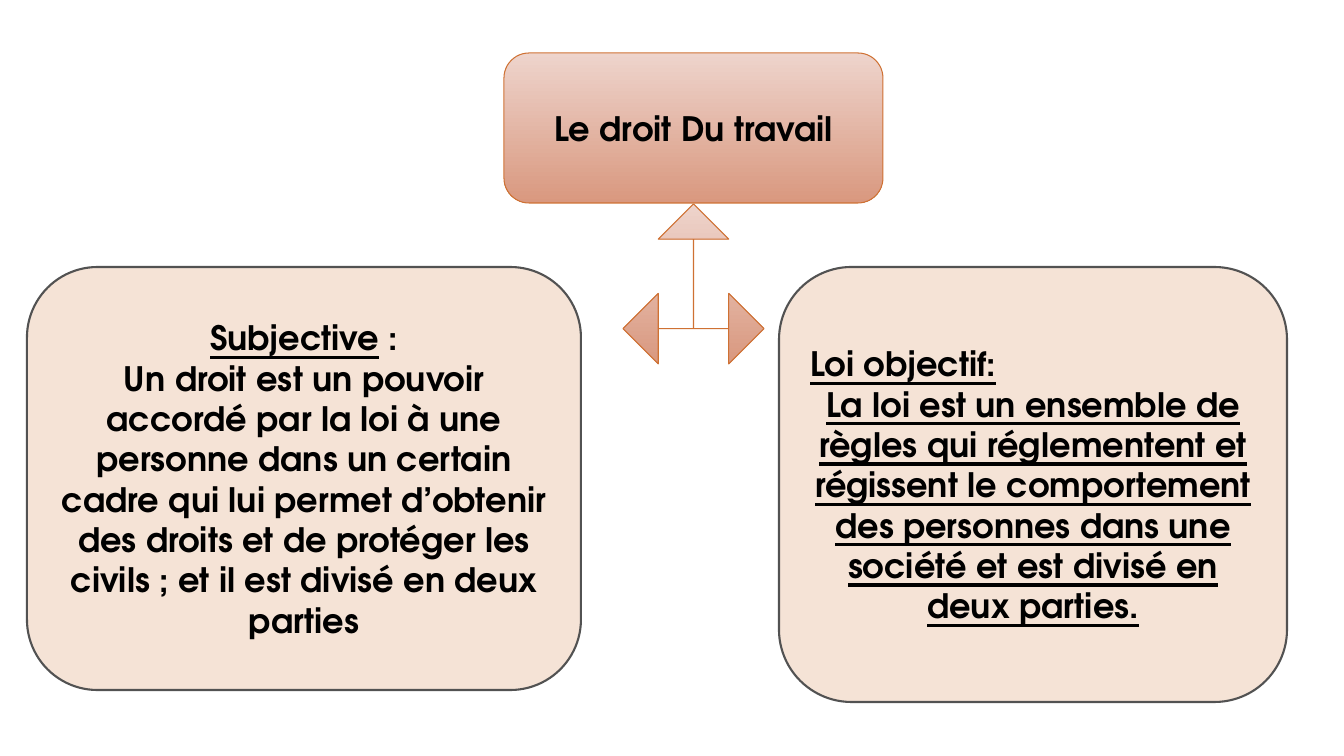
from dataclasses import dataclass

from pptx import Presentation
from pptx.dml.color import RGBColor
from pptx.enum.shapes import MSO_SHAPE
from pptx.enum.text import MSO_ANCHOR, PP_ALIGN
from pptx.shapes.autoshape import Shape
from pptx.slide import Slide
from pptx.text.text import TextFrame
from pptx.util import Pt

BOX = MSO_SHAPE.FLOWCHART_ALTERNATE_PROCESS
THREE_WAY_ARROW = MSO_SHAPE.LEFT_RIGHT_UP_ARROW
LEFT, CENTER = PP_ALIGN.LEFT, PP_ALIGN.CENTER
MIDDLE = MSO_ANCHOR.MIDDLE

EMU_PER_PX = 914400 / 100.8
FONT = "TeX Gyre Adventor"
BLACK = "000000"
ORANGE = "CF7133"
GREY = "525252"
CREAM = "F5E3D6"
ROSE_GRADIENT = ("EED4CC", "D9987F")


@dataclass(frozen=True)
class Run:
    text: str
    underline: bool = False


@dataclass(frozen=True)
class Line:
    runs: tuple[Run, ...]
    align: PP_ALIGN = CENTER


@dataclass(frozen=True)
class Node:
    """A diagram part; two fill colours make a top-to-bottom gradient."""
    left: int
    top: int
    width: int
    height: int
    fills: tuple[str, ...]
    outline: str
    outline_pt: float
    lines: tuple[Line, ...] = ()
    preset: MSO_SHAPE = BOX
    adjustments: tuple[float, ...] = ()


NODES = (
    Node(504, 53, 379, 150, ROSE_GRADIENT, ORANGE, 0.75,
         (Line((Run("Le droit Du travail"),)),)),
    Node(27, 267, 554, 423, (CREAM,), GREY, 1.5, (
        Line((Run("Subjective", underline=True), Run(" :"))),
        Line((Run("Un droit est un pouvoir accordé par la loi à une personne "
                  "dans un certain cadre qui lui permet d’obtenir des droits "
                  "et de protéger les civils ; et il est divisé en deux "
                  "parties"),)),
    )),
    Node(779, 267, 508, 435, (CREAM,), GREY, 1.5, (
        Line((Run("Loi objectif:", underline=True),), LEFT),
        Line((Run("La loi est un ensemble de règles qui réglementent et "
                  "régissent le comportement des personnes dans une société "
                  "et est divisé en deux parties.", underline=True),)),
    )),
    Node(623, 204, 141, 160, ROSE_GRADIENT, ORANGE, 0.75,
         preset=THREE_WAY_ARROW, adjustments=(0, 0.25, 0.25)),
)


def px(length: int) -> int:
    return round(length * EMU_PER_PX)


def rgb(value: str) -> RGBColor:
    return RGBColor.from_string(value)


def write_text(frame: TextFrame, lines: tuple[Line, ...], *, size: int = 24,
               color: str = BLACK, bold: bool = True) -> None:
    frame.word_wrap = True
    frame.vertical_anchor = MIDDLE
    for index, line in enumerate(lines):
        paragraph = frame.add_paragraph() if index else frame.paragraphs[0]
        paragraph.alignment = line.align
        for part in line.runs:
            run = paragraph.add_run()
            run.text = part.text
            run.font.name = FONT
            run.font.size = Pt(size)
            run.font.bold = bold
            run.font.underline = part.underline
            run.font.color.rgb = rgb(color)


def paint(shape: Shape, fills: tuple[str, ...]) -> None:
    if len(fills) == 1:
        shape.fill.solid()
        shape.fill.fore_color.rgb = rgb(fills[0])
        return
    shape.fill.gradient()
    shape.fill.gradient_angle = 270
    for stop, color in zip(shape.fill.gradient_stops, fills):
        stop.color.rgb = rgb(color)


def draw_node(slide: Slide, node: Node) -> None:
    shape = slide.shapes.add_shape(node.preset, px(node.left), px(node.top),
                                   px(node.width), px(node.height))
    shape.shadow.inherit = False
    for index, value in enumerate(node.adjustments):
        shape.adjustments[index] = value
    paint(shape, node.fills)
    shape.line.color.rgb = rgb(node.outline)
    shape.line.width = Pt(node.outline_pt)
    if node.lines:
        write_text(shape.text_frame, node.lines)


def main() -> None:
    presentation = Presentation()
    presentation.slide_width = px(1344)
    presentation.slide_height = px(756)
    slide = presentation.slides.add_slide(presentation.slide_layouts[6])
    for node in NODES:
        draw_node(slide, node)
    presentation.save("out.pptx")


if __name__ == "__main__":
    main()
